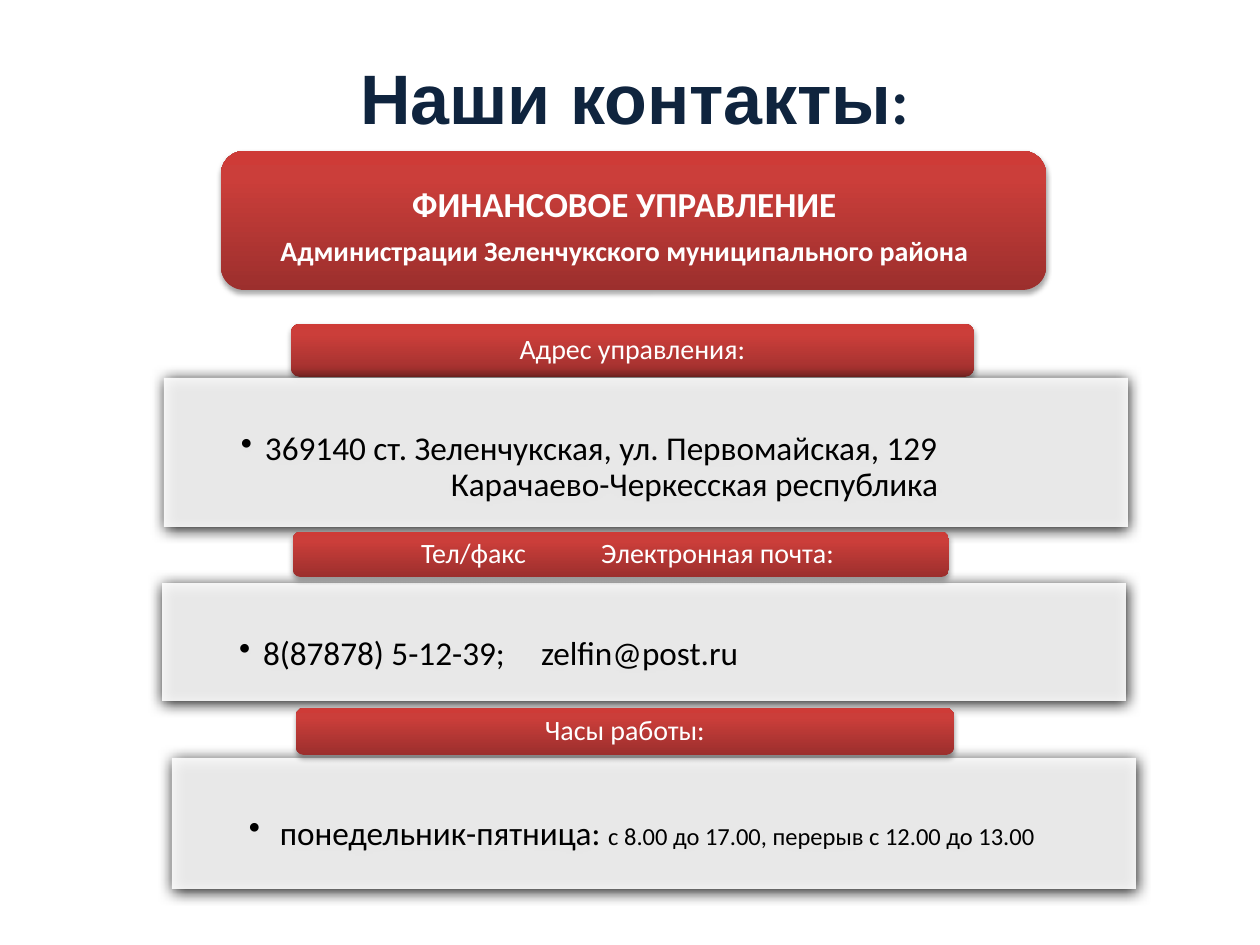
from dataclasses import dataclass

from lxml import etree
from pptx import Presentation
from pptx.dml.color import RGBColor
from pptx.enum.shapes import MSO_SHAPE
from pptx.enum.text import MSO_ANCHOR, PP_ALIGN
from pptx.oxml.ns import qn
from pptx.util import Emu, Pt

ROUND, RECT = MSO_SHAPE.ROUNDED_RECTANGLE, MSO_SHAPE.RECTANGLE
TOP, MIDDLE = MSO_ANCHOR.TOP, MSO_ANCHOR.MIDDLE
LEFT, CENTER = PP_ALIGN.LEFT, PP_ALIGN.CENTER
PX_PER_INCH = 126


@dataclass(frozen=True)
class Theme:
    navy: str = "0F243E"
    white: str = "FFFFFF"
    black: str = "000000"
    reds: tuple = ((0, "9C2F2D"), (80, "CB3E3A"), (100, "CE3B37"))
    title_font: str = "Arial"
    font: str = "Calibri"
    title: int = 40
    colon: int = 36
    heading: int = 20
    band: int = 16
    body: int = 19
    small: int = 14


T = Theme()


def px(n):
    return Emu(round(n * 914400 / PX_PER_INCH))


def sub(parent, tag, **attrs):
    return etree.SubElement(parent, qn(tag), {k: str(v) for k, v in attrs.items()})


def add_run(p, text, size, color, font=T.font, bold=False):
    r = p.add_run()
    r.text = text
    r.font.size = Pt(size)
    r.font.name = font
    r.font.bold = bold
    r.font.color.rgb = RGBColor.from_string(color)


def add_tabs(p, stops):
    tabs = sub(p._p.get_or_add_pPr(), "a:tabLst")
    for stop in stops:
        sub(tabs, "a:tab", pos=px(stop), algn="l")


def set_indent(p, margin, hanging=0):
    pPr = p._p.get_or_add_pPr()
    pPr.set("marL", str(px(margin)))
    pPr.set("indent", str(px(-hanging)))
    if hanging:
        sub(pPr, "a:buChar", char="•")
    else:
        sub(pPr, "a:buNone")


def add_shadow(sp, alpha, blur, dist):
    effects = sub(sp._element.spPr, "a:effectLst")
    shadow = sub(effects, "a:outerShdw", blurRad=Pt(blur), dist=Pt(dist),
                 dir=5400000, rotWithShape=0)
    sub(sub(shadow, "a:srgbClr", val=T.black), "a:alpha", val=alpha * 1000)


def add_box(s, kind, box, insets, anchor):
    sp = s.shapes.add_shape(kind, *map(px, box))
    sp.line.fill.background()
    tf = sp.text_frame
    tf.word_wrap = True
    tf.vertical_anchor = anchor
    tf.margin_left, tf.margin_top, tf.margin_right, tf.margin_bottom = map(px, insets)
    return sp


def add_band(s, box, lines, insets=(26, 0, 26, 0), tabs=()):
    sp = add_box(s, ROUND, box, insets, MIDDLE)
    spPr = sp._element.spPr
    grad = etree.Element(qn("a:gradFill"), rotWithShape="1")
    stops = sub(grad, "a:gsLst")
    for pos, color in T.reds:
        sub(sub(stops, "a:gs", pos=pos * 1000), "a:srgbClr", val=color)
    sub(grad, "a:lin", ang=270 * 60000, scaled=0)
    spPr.find(qn("a:prstGeom")).addnext(grad)
    add_shadow(sp, 35, 3.1, 1.8)
    tf = sp.text_frame
    for i, (text, size, bold) in enumerate(lines):
        p = tf.add_paragraph() if i else tf.paragraphs[0]
        if tabs:
            add_tabs(p, tabs)
        p.alignment = LEFT if tabs else CENTER
        p.line_spacing = 0.9
        p.space_after = Pt(size * 0.35)
        add_run(p, text, size, T.white, bold=bold)


def add_card(s, box, runs, hanging=24, spacing=0.9, tabs=(), second=None):
    sp = add_box(s, RECT, box, (77, 54, 77, 19), TOP)
    sp.fill.solid()
    sp.fill.fore_color.rgb = RGBColor.from_string(T.white)
    color = sp._element.spPr.find(qn("a:solidFill"))[0]
    sub(color, "a:alpha", val=90000)
    add_shadow(sp, 100, 8.5, 1)
    tf = sp.text_frame
    p = tf.paragraphs[0]
    set_indent(p, hanging, hanging)
    if tabs:
        add_tabs(p, tabs)
    p.alignment = LEFT
    p.line_spacing = spacing
    for text, size in runs:
        add_run(p, text, size, T.black)
    if second:
        text, margin = second
        p = tf.add_paragraph()
        set_indent(p, margin)
        p.alignment = LEFT
        p.line_spacing = spacing
        add_run(p, text, T.body, T.black)


def add_title(s):
    title = s.shapes.title
    title.left, title.top, title.width, title.height = map(px, (123, 48, 1023, 97))
    tf = title.text_frame
    tf.word_wrap = True
    tf.vertical_anchor = MIDDLE
    p = tf.paragraphs[0]
    p.alignment = CENTER
    add_run(p, "Наши контакты", T.title, T.navy, T.title_font, True)
    add_run(p, ":", T.colon, T.navy, bold=True)


def main():
    prs = Presentation()
    prs.slide_width, prs.slide_height = px(1260), px(945)
    s = prs.slides.add_slide(prs.slide_layouts[5])
    add_title(s)
    add_band(s, (291, 324, 683, 53), [("Адрес управления:", T.band, False)])
    add_card(s, (164, 378, 964, 149),
             [("369140 ст. Зеленчукская, ул. Первомайская, 129", T.body)],
             second=("Карачаево-Черкесская республика", 210))
    add_card(s, (162, 583, 964, 118),
             [("8(87878) 5-12-39;\tzelfin@post.ru", T.body)], tabs=(302,))
    add_band(s, (293, 532, 656, 45),
             [("\tТел/факс\tЭлектронная почта:", T.band, False)], tabs=(100, 280))
    add_band(s, (221, 151, 825, 139),
             [("ФИНАНСОВОЕ УПРАВЛЕНИЕ", T.heading, True),
              ("Администрации Зеленчукского муниципального района", T.band, True)],
             insets=(26, 14, 44, 0))
    add_card(s, (172, 758, 964, 131),
             [("понедельник-пятница: ", T.body),
              ("с 8.00 до 17.00, перерыв с 12.00 до 13.00", T.small)],
             hanging=31, spacing=1.0)
    add_band(s, (296, 708, 658, 47), [("Часы работы:", T.band, False)])
    prs.save("out.pptx")


if __name__ == "__main__":
    main()
